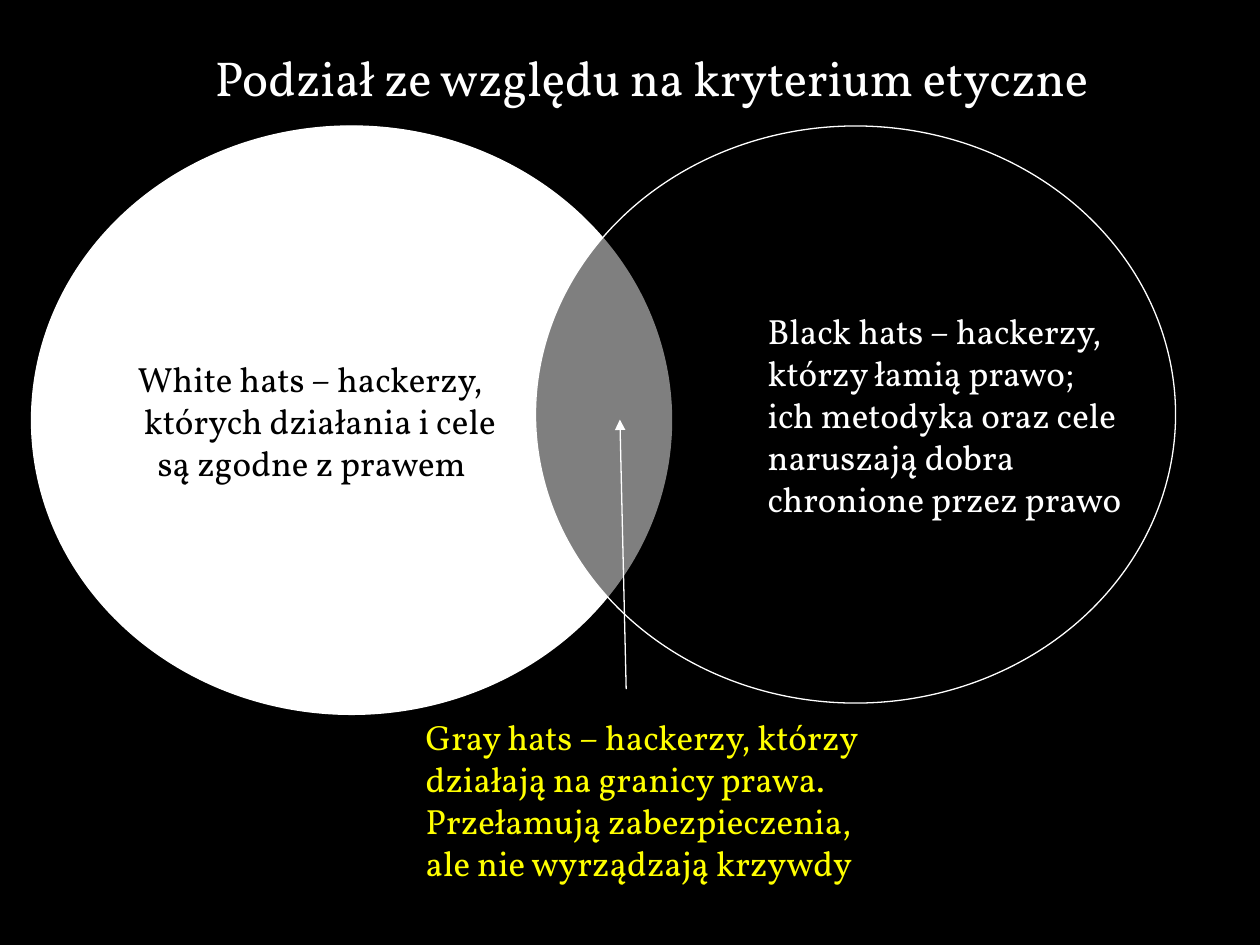
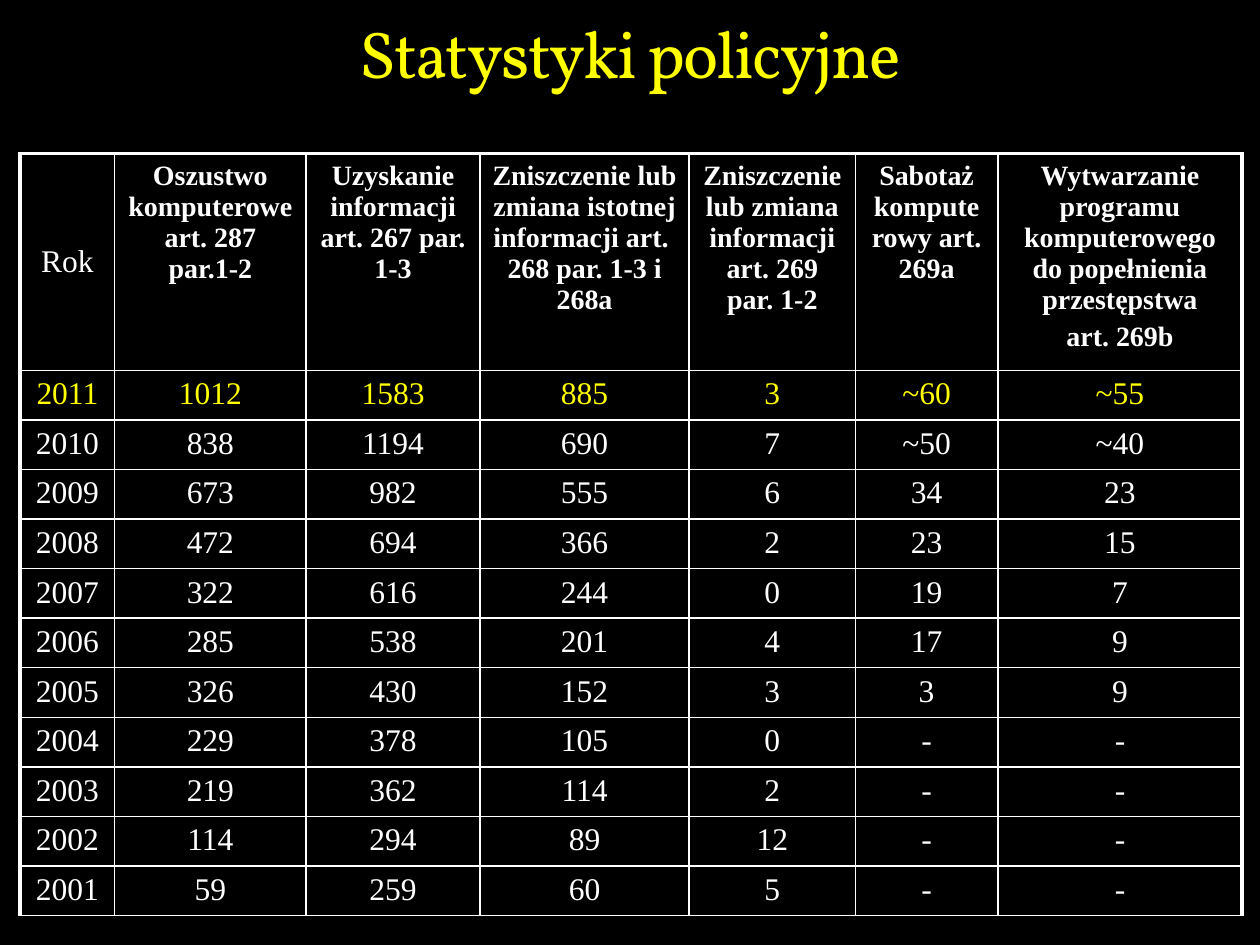
from lxml import etree
from pptx import Presentation
from pptx.dml.color import RGBColor
from pptx.enum.shapes import MSO_CONNECTOR, MSO_SHAPE
from pptx.enum.text import MSO_ANCHOR, MSO_AUTO_SIZE, PP_ALIGN
from pptx.oxml.ns import qn
from pptx.util import Inches, Pt

BLACK = RGBColor(0x00, 0x00, 0x00)
WHITE = RGBColor(0xFF, 0xFF, 0xFF)
YELLOW = RGBColor(0xFF, 0xFF, 0x00)
SERIF = "Vollkorn"
TABLE_FONT = "Times New Roman"

WHITE_HATS = ["White hats – hackerzy,", "których działania i cele", "są zgodne z prawem"]
BLACK_HATS = ["Black hats – hackerzy,", "którzy łamią prawo;", "ich metodyka oraz cele",
              "naruszają dobra", "chronione przez prawo"]
GRAY_HATS = ("Gray hats – hackerzy, którzy działają na granicy prawa. "
             "Przełamują zabezpieczenia, ale nie wyrządzają krzywdy")

HEADERS = [
    "Rok",
    "Oszustwo komputerowe art. 287 par.1-2",
    "Uzyskanie informacji art. 267 par. 1-3",
    "Zniszczenie lub zmiana istotnej informacji art. \v268 par. 1-3 i 268a",
    "Zniszczenie lub zmiana informacji art. 269 par. 1-2",
    "Sabotaż komputerowy art. 269a",
    "Wytwarzanie programu komputerowego do popełnienia przestępstwa\nart. 269b",
]
CRIMES = [
    ("2011", "1012", "1583", "885", "3", "~60", "~55"),
    ("2010", "838", "1194", "690", "7", "~50", "~40"),
    ("2009", "673", "982", "555", "6", "34", "23"),
    ("2008", "472", "694", "366", "2", "23", "15"),
    ("2007", "322", "616", "244", "0", "19", "7"),
    ("2006", "285", "538", "201", "4", "17", "9"),
    ("2005", "326", "430", "152", "3", "3", "9"),
    ("2004", "229", "378", "105", "0", "-", "-"),
    ("2003", "219", "362", "114", "2", "-", "-"),
    ("2002", "114", "294", "89", "12", "-", "-"),
    ("2001", "59", "259", "60", "5", "-", "-"),
]
COLUMN_WIDTHS = [0.75, 1.52, 1.38, 1.66, 1.32, 1.13, 1.94]
HEADER_HEIGHT = 1.72


def format_runs(p, size, color, font=SERIF, bold=False):
    for r in p.runs:
        r.font.size = Pt(size)
        r.font.name = font
        r.font.bold = bold
        r.font.color.rgb = color


def add_title(slide, text, box, size, color, anchor, spacing=0):
    sp = slide.shapes.title
    sp.left, sp.top, sp.width, sp.height = map(Inches, box)
    tf = sp.text_frame
    tf.text = text
    tf.word_wrap = True
    tf.auto_size = MSO_AUTO_SIZE.NONE
    tf.vertical_anchor = anchor
    p = tf.paragraphs[0]
    p.alignment = PP_ALIGN.CENTER
    format_runs(p, size, color)
    if spacing:
        p.runs[0].font._element.set("spc", str(spacing))


def add_circle(slide, box, fill, lines, color, indents, alpha=None):
    sp = slide.shapes.add_shape(MSO_SHAPE.OVAL, *map(Inches, box))
    sp.shadow.inherit = False
    sp.fill.solid()
    sp.fill.fore_color.rgb = fill
    if alpha:
        srgb = sp._element.spPr.find(qn("a:solidFill")).find(qn("a:srgbClr"))
        etree.SubElement(srgb, qn("a:alpha"), val=str(alpha * 1000))
    sp.line.color.rgb = WHITE
    sp.line.width = Pt(0.75)
    tf = sp.text_frame
    tf.text = "\n".join(lines)
    tf.word_wrap = False
    tf.vertical_anchor = MSO_ANCHOR.MIDDLE
    for p, indent in zip(tf.paragraphs, indents):
        p.alignment = PP_ALIGN.JUSTIFY
        p._p.get_or_add_pPr().set("marL", str(Inches(indent)))
        format_runs(p, 20, color)


def add_arrow(slide, start, end):
    line = slide.shapes.add_connector(MSO_CONNECTOR.STRAIGHT, *map(Inches, start + end))
    line.line.color.rgb = WHITE
    line.line.width = Pt(0.75)
    etree.SubElement(line.line._get_or_add_ln(), qn("a:tailEnd"), type="triangle")
    etree.SubElement(line._element.spPr, qn("a:effectLst"))


def add_caption(slide, text, box):
    tf = slide.shapes.add_textbox(*map(Inches, box)).text_frame
    tf.text = text
    tf.word_wrap = True
    format_runs(tf.paragraphs[0], 20, YELLOW)


def set_borders(cell, widths):
    tc_pr = cell._tc.get_or_add_tcPr()
    for i, (side, width) in enumerate(zip("LRTB", widths)):
        ln = etree.Element(qn(f"a:ln{side}"), w=str(Pt(width)))
        fill = etree.SubElement(ln, qn("a:solidFill"))
        etree.SubElement(fill, qn("a:srgbClr"), val=str(WHITE))
        tc_pr.insert(i, ln)


def add_crime_table(slide, box):
    rows = [HEADERS] + CRIMES
    table = slide.shapes.add_table(len(rows), len(HEADERS), *map(Inches, box)).table
    table.first_row = table.horz_banding = False
    for column, width in zip(table.columns, COLUMN_WIDTHS):
        column.width = Inches(width)
    row_height = (box[3] - HEADER_HEIGHT) / len(CRIMES)
    last = len(HEADERS) - 1
    for i, values in enumerate(rows):
        table.rows[i].height = Inches(row_height if i else HEADER_HEIGHT)
        for j, value in enumerate(values):
            cell = table.cell(i, j)
            cell.fill.background()
            set_borders(cell, (1 if j else 2.25, 2.25 if j == last else 1, 1 if i else 2.25, 1))
            is_heading = i == 0 and j > 0
            size = 16 if is_heading else 18
            cell.vertical_anchor = MSO_ANCHOR.MIDDLE if i == j == 0 else MSO_ANCHOR.TOP
            cell.text_frame.text = value
            for k, p in enumerate(cell.text_frame.paragraphs):
                p.alignment = PP_ALIGN.CENTER
                if k:
                    p.space_before = Pt(0.2 * size)
                format_runs(p, size, YELLOW if i == 1 else WHITE, TABLE_FONT, is_heading)


def build_ethics_slide(slide):
    add_title(slide, "Podział ze względu na kryterium etyczne",
              (0.67, 0.33, 9, 0.57), 28, WHITE, MSO_ANCHOR.TOP)
    add_circle(slide, (0.25, 1, 5.08, 4.67), WHITE, WHITE_HATS, BLACK, (0, 0.05, 0.16))
    add_circle(slide, (4.25, 1, 5.08, 4.58), BLACK, BLACK_HATS, WHITE,
               [1] * len(BLACK_HATS), alpha=50)
    add_arrow(slide, (4.97, 5.47), (4.92, 3.33))
    add_caption(slide, GRAY_HATS, (3.28, 5.63, 3.75, 1.43))


def build_statistics_slide(slide):
    add_title(slide, "Statystyki policyjne", (0, 0.16, 10, 0.62), 37.8, YELLOW,
              MSO_ANCHOR.BOTTOM, spacing=-100)
    add_crime_table(slide, (0.16, 1.22, 9.69, 6.05))


def main():
    prs = Presentation()
    prs.slide_width, prs.slide_height = Inches(10), Inches(7.5)
    background = prs.slide_master.background.fill
    background.solid()
    background.fore_color.rgb = BLACK
    title_only = prs.slide_layouts[5]
    for build in (build_ethics_slide, build_statistics_slide):
        build(prs.slides.add_slide(title_only))
    prs.save("out.pptx")


if __name__ == "__main__":
    main()
